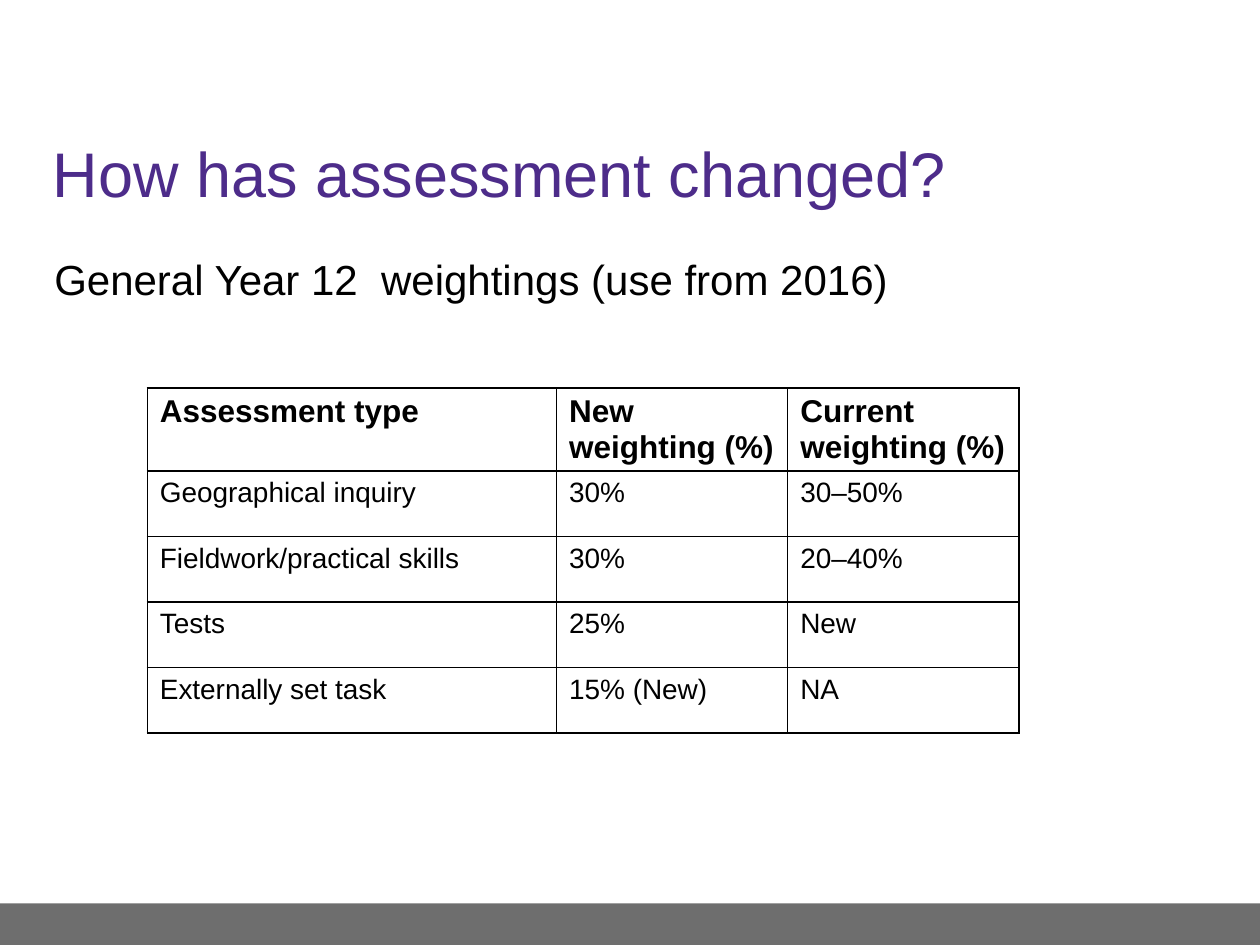
from dataclasses import dataclass

from lxml import etree
from pptx import Presentation
from pptx.dml.color import RGBColor
from pptx.enum.shapes import MSO_SHAPE
from pptx.enum.text import MSO_ANCHOR, PP_ALIGN
from pptx.oxml.ns import qn
from pptx.util import Cm, Pt

RECTANGLE = MSO_SHAPE.RECTANGLE
MIDDLE, TOP = MSO_ANCHOR.MIDDLE, MSO_ANCHOR.TOP
LEFT = PP_ALIGN.LEFT


@dataclass(frozen=True)
class Theme:
    font: str = "Arial"
    title_color: str = "4D2C8A"
    text_color: str = "000000"
    bar_color: str = "6E6E6E"
    title_size: int = 36
    body_size: int = 24
    header_size: int = 18
    cell_size: int = 16
    border_width: int = 1


@dataclass(frozen=True)
class Box:
    left: float
    top: float
    width: float
    height: float


@dataclass(frozen=True)
class Assessment:
    kind: str
    new_weighting: str
    current_weighting: str


THEME = Theme()
TITLE_BOX = Box(0.81, 2.31, 23.75, 2.34)
BODY_BOX = Box(0.84, 4.98, 23.7, 12.8)
TABLE_BOX = Box(2.97, 7.82, 17.57, 6.6)
BAR_BOX = Box(0, 18.21, 25.4, 0.84)
COLUMN_WIDTHS = (8.25, 4.66, 4.66)

HEADER = Assessment("Assessment type", "New weighting (%)", "Current weighting (%)")
ASSESSMENTS = (
    Assessment("Geographical inquiry", "30%", "30–50%"),
    Assessment("Fieldwork/practical skills", "30%", "20–40%"),
    Assessment("Tests", "25%", "New"),
    Assessment("Externally set task", "15% (New)", "NA"),
)


def lengths(box: Box) -> tuple:
    return Cm(box.left), Cm(box.top), Cm(box.width), Cm(box.height)


def write(frame, text: str, size: int, color: str, bold: bool = False) -> None:
    frame.text = text
    para = frame.paragraphs[0]
    para.alignment = LEFT
    para.space_before = Pt(0)
    for span in para.runs:
        span.font.name = THEME.font
        span.font.size = Pt(size)
        span.font.bold = bold
        span.font.color.rgb = RGBColor.from_string(color)


def fill_placeholder(shape, box: Box, text: str, size: int, color: str) -> None:
    shape.left, shape.top, shape.width, shape.height = lengths(box)
    write(shape.text_frame, text, size, color)


def remove_bullet(para) -> None:
    properties = para._p.get_or_add_pPr()
    properties.set("marL", "0")
    properties.set("indent", "0")
    etree.SubElement(properties, qn("a:buNone"))


def add_borders(cell) -> None:
    properties = cell._tc.get_or_add_tcPr()
    for position, side in enumerate(("lnL", "lnR", "lnT", "lnB")):
        line = etree.Element(qn(f"a:{side}"), w=str(Pt(THEME.border_width)))
        fill = etree.SubElement(line, qn("a:solidFill"))
        etree.SubElement(fill, qn("a:srgbClr"), val=THEME.text_color)
        properties.insert(position, line)


def add_weightings_table(page) -> None:
    records = (HEADER, *ASSESSMENTS)
    table = page.shapes.add_table(len(records), len(COLUMN_WIDTHS), *lengths(TABLE_BOX)).table
    for column, width in zip(table.columns, COLUMN_WIDTHS):
        column.width = Cm(width)
    for row, record in zip(table.rows, records):
        is_header = record is HEADER
        size = THEME.header_size if is_header else THEME.cell_size
        texts = (record.kind, record.new_weighting, record.current_weighting)
        for cell, text in zip(row.cells, texts):
            cell.fill.background()
            cell.vertical_anchor = TOP
            write(cell.text_frame, text, size, THEME.text_color, is_header)
            add_borders(cell)


def add_footer_bar(page) -> None:
    bar = page.shapes.add_shape(RECTANGLE, *lengths(BAR_BOX))
    bar.shadow.inherit = False
    bar.fill.solid()
    bar.fill.fore_color.rgb = RGBColor.from_string(THEME.bar_color)
    bar.line.fill.background()


def main() -> None:
    deck = Presentation()
    deck.slide_width, deck.slide_height = Cm(25.4), Cm(19.05)
    page = deck.slides.add_slide(deck.slide_layouts[1])

    add_footer_bar(page)
    title, body = page.shapes.title, page.placeholders[1]
    fill_placeholder(title, TITLE_BOX, "How has assessment changed?",
                     THEME.title_size, THEME.title_color)
    title.text_frame.vertical_anchor = MIDDLE
    fill_placeholder(body, BODY_BOX, "General Year 12  weightings (use from 2016)",
                     THEME.body_size, THEME.text_color)
    remove_bullet(body.text_frame.paragraphs[0])
    body.text_frame.paragraphs[0].space_after = Pt(6)
    add_weightings_table(page)

    deck.save("out.pptx")


if __name__ == "__main__":
    main()
